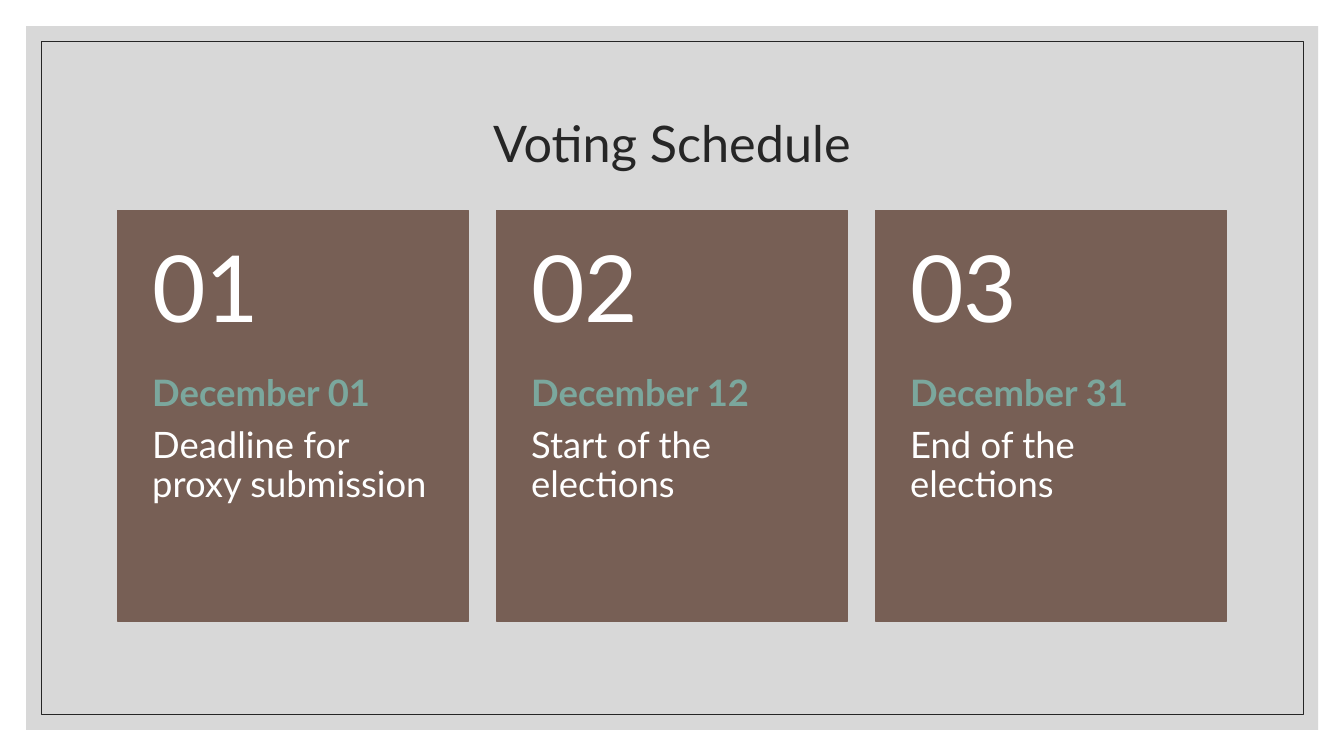
from pptx import Presentation
from pptx.dml.color import RGBColor
from pptx.enum.shapes import MSO_SHAPE
from pptx.enum.text import MSO_ANCHOR, MSO_AUTO_SIZE, PP_ALIGN
from pptx.oxml.ns import qn
from pptx.util import Pt
from lxml import etree

WHITE = RGBColor(0xFF, 0xFF, 0xFF)
GREY = RGBColor(0xBF, 0xBF, 0xBF)
DARK = RGBColor(0x26, 0x26, 0x26)
BROWN = RGBColor(0x77, 0x5F, 0x55)
TEAL = RGBColor(0x7B, 0xA7, 0x9D)


def add_rect(shapes, box, fill=None, line=None, width=1):
    sp = shapes.add_shape(MSO_SHAPE.RECTANGLE, *map(Pt, box))
    sp.shadow.inherit = False
    if fill is None:
        sp.fill.background()
    else:
        sp.fill.solid()
        sp.fill.fore_color.rgb = fill
    if line is None:
        sp.line.fill.background()
    else:
        sp.line.color.rgb = line
        sp.line.width = Pt(width)
    return sp


def write(tf, lines, frame, align=PP_ALIGN.LEFT, space_after=0):
    tf.word_wrap = True
    tf.auto_size = MSO_AUTO_SIZE.NONE
    for name, value in frame.items():
        setattr(tf, name, value)
    for i, (text, size, color, bold) in enumerate(lines):
        p = tf.paragraphs[0] if i == 0 else tf.add_paragraph()
        p.alignment = align
        p.line_spacing = 0.9
        p.space_after = Pt(space_after)
        r = p.add_run()
        r.text = text
        r.font.color.rgb = color
        font = {"name": "Lato", "size": Pt(size), "bold": bold}
        for name, value in font.items():
            setattr(r.font, name, value)


prs = Presentation()
prs.slide_width, prs.slide_height = Pt(960), Pt(540)
s = prs.slides.add_slide(prs.slide_layouts[5])

# Backdrop panel, 60% opaque, and thin frame
panel = add_rect(s.shapes, (18.7, 18.7, 922.8, 502.6), GREY)
color = panel.fill._xPr.find(".//" + qn("a:srgbClr"))
etree.SubElement(color, qn("a:alpha"), val="60000")
border = add_rect(s.shapes, (29.5, 29.5, 901.4, 481), line=DARK, width=0.5)

# Title, brought in front of the panel
title = s.shapes.title
title.left, title.top, title.width, title.height = map(Pt, (84, 50.4, 792, 108))
write(title.text_frame, [("Voting Schedule", 36, DARK, False)],
      {"vertical_anchor": MSO_ANCHOR.MIDDLE}, PP_ALIGN.CENTER)
border._element.addnext(title._element)

# Three equal cards across the title's width
LEFT, TOP, WIDTH, HEIGHT, GAP = 84, 150.5, 250.6, 293.2, 20.1
NUMBER_HEIGHT = 117.3
SIDES = {"margin_left": Pt(24.7), "margin_right": Pt(24.7)}
NUMBER_FRAME = {**SIDES, "margin_top": Pt(13), "margin_bottom": Pt(13),
                "vertical_anchor": MSO_ANCHOR.MIDDLE}
EVENT_FRAME = {**SIDES, "margin_top": 0, "margin_bottom": Pt(26),
               "vertical_anchor": MSO_ANCHOR.TOP}
events = [
    ("December 01", "Deadline for proxy submission"),
    ("December 12", "Start of the elections"),
    ("December 31", "End of the elections"),
]
for i, (date, event) in enumerate(events):
    x = LEFT + i * (WIDTH + GAP)
    card = s.shapes.add_group_shape().shapes
    add_rect(card, (x, TOP, WIDTH, HEIGHT), BROWN, BROWN)
    # Date and event
    box = card.add_textbox(Pt(x), Pt(TOP + NUMBER_HEIGHT),
                           Pt(WIDTH), Pt(HEIGHT - NUMBER_HEIGHT))
    write(box.text_frame, [(date, 26, TEAL, True), (event, 26, WHITE, False)],
          EVENT_FRAME, space_after=9.1)
    # Number
    box = card.add_textbox(Pt(x), Pt(TOP), Pt(WIDTH), Pt(NUMBER_HEIGHT))
    write(box.text_frame, [(f"{i + 1:02}", 66, WHITE, False)], NUMBER_FRAME)

prs.save("out.pptx")
